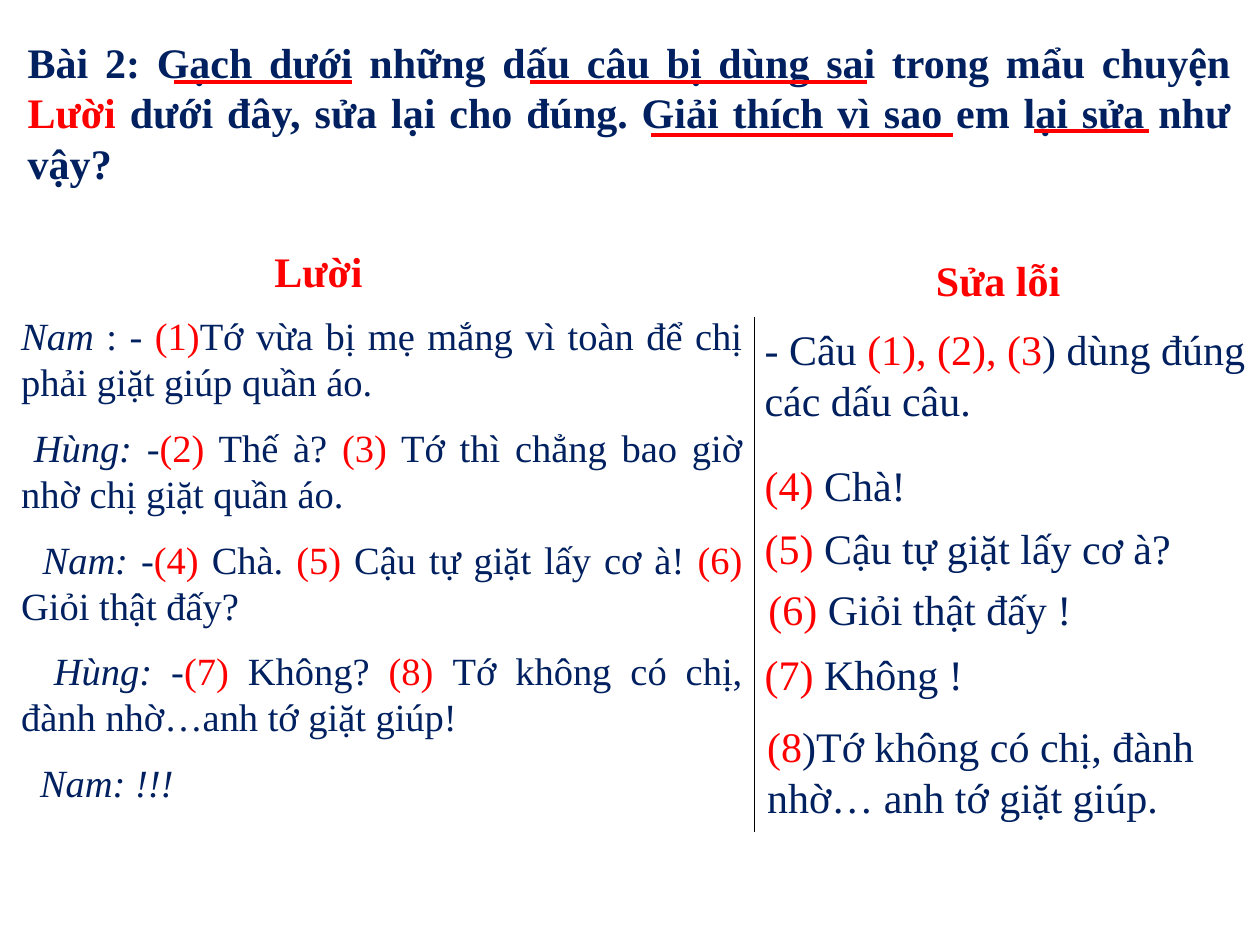
from lxml import etree
from pptx import Presentation
from pptx.dml.color import RGBColor
from pptx.enum.shapes import MSO_CONNECTOR
from pptx.enum.text import MSO_ANCHOR, PP_ALIGN
from pptx.oxml.ns import qn
from pptx.util import Inches, Pt

LEFT, JUSTIFY = PP_ALIGN.LEFT, PP_ALIGN.JUSTIFY
FONT = "Times New Roman"
COLORS = {"navy": "002060", "red": "FF0000", "black": "000000"}

# Run styles: n = navy, r = red, i = navy italic
TITLE = [("n", "Bài 2: Gạch dưới những dấu câu bị dùng sai trong mẩu chuyện "),
         ("r", "Lười"),
         ("n", " dưới đây, sửa lại cho đúng. Giải thích vì sao em lại sửa như vậy?")]

# First-line indent, runs
STORY = [
    (0, [("i", "Nam"), ("n", " : - "), ("r", "(1)"),
         ("n", "Tớ vừa bị mẹ mắng vì toàn để chị phải giặt giúp quần áo.")]),
    (0.1, [("i", "Hùng:"), ("n", " -"), ("r", "(2)"), ("n", " Thế à? "), ("r", "(3)"),
           ("n", " Tớ thì chẳng bao giờ nhờ chị giặt quần áo.")]),
    (0.17, [("i", "Nam:"), ("n", " -"), ("r", "(4) "), ("n", "Chà."), ("r", " (5) "),
            ("n", "Cậu tự giặt lấy cơ à!"), ("r", " (6) "), ("n", "Giỏi thật đấy?")]),
    (0.26, [("i", "Hùng:"), ("n", " -"), ("r", "(7) "), ("n", "Không? "), ("r", "(8) "),
            ("n", "Tớ không có chị, đành nhờ…anh tớ giặt giúp!")]),
    (0.15, [("i", "Nam: !!!")]),
]

# Left, top, width, height, text
HEADINGS = [(2.08, 1.9, 1.5, 0.5, "Lười"), (7.33, 1.97, 2.25, 0.5, "Sửa lỗi")]

# Left, top, width, height, runs
FIXES = [
    (5.97, 2.52, 4.08, 0.91, [("n", "- Câu "), ("r", "(1), (2), (3"),
                              ("n", ") dùng đúng các dấu câu.")]),
    (5.97, 3.6, 3.75, 0.5, [("r", "(4)"), ("n", " Chà!")]),
    (5.97, 4.1, 4.08, 0.5, [("r", "(5)"), ("n", " Cậu tự giặt lấy cơ à?")]),
    (6, 4.58, 3.83, 0.5, [("r", "(6) "), ("n", "Giỏi thật đấy !")]),
    (5.97, 5.1, 3.25, 0.5, [("r", "(7)"), ("n", " Không !")]),
    (5.99, 5.67, 4.08, 0.91, [("r", "(8"),
                              ("n", ")Tớ không có chị, đành nhờ… anh tớ giặt giúp.")]),
]

# Start x, end x, y
UNDERLINES = [(1.38, 2.79, 0.65), (4.21, 6.88, 0.65), (5.17, 7.56, 1.07), (8.21, 9.12, 1.04)]


def place(sp, left, top, width, height):
    sp.left, sp.top, sp.width, sp.height = map(Inches, (left, top, width, height))


def write(sp, paragraphs, size, bold=False, align=LEFT):
    tf = sp.text_frame
    tf.word_wrap = True
    tf.vertical_anchor = MSO_ANCHOR.TOP
    for n, (indent, runs) in enumerate(paragraphs):
        p = tf.add_paragraph() if n else tf.paragraphs[0]
        p.alignment = align
        p.space_before = Pt(size / 2)
        if indent:
            p._p.get_or_add_pPr().set("indent", str(Inches(indent)))
        for style, text in runs:
            r = p.add_run()
            r.text = text
            r.font.name = FONT
            r.font.size = Pt(size)
            r.font.bold = bold
            r.font.italic = style == "i"
            color = COLORS["red" if style == "r" else "navy"]
            r.font.color.rgb = RGBColor.from_string(color)


def add_text(s, box, paragraphs, size=24, bold=False, align=LEFT):
    sp = s.shapes.add_textbox(*map(Inches, box))
    write(sp, paragraphs, size, bold, align)


def add_line(s, x1, y1, x2, y2, color, width):
    line = s.shapes.add_connector(MSO_CONNECTOR.STRAIGHT, *map(Inches, (x1, y1, x2, y2)))
    line.line.color.rgb = RGBColor.from_string(COLORS[color])
    line.line.width = Pt(width)
    etree.SubElement(line._element.spPr, qn("a:effectLst"))


def main():
    prs = Presentation()
    prs.slide_width, prs.slide_height = Inches(10), Inches(7.5)
    s = prs.slides.add_slide(prs.slide_layouts[5])

    # Exercise statement
    title = s.shapes.title
    place(title, 0.12, 0.24, 9.75, 1.31)
    write(title, [(0, TITLE)], 24, True, JUSTIFY)

    # Story and corrections, parted by a vertical rule
    add_text(s, (0.07, 2.43, 5.92, 4.13), STORY, 22, align=JUSTIFY)
    for *box, text in HEADINGS:
        add_text(s, box, [(0, [("r", text)])], bold=True)
    add_line(s, 5.99, 2.52, 5.99, 6.6, "black", 0.75)
    for *box, runs in FIXES:
        add_text(s, box, [(0, runs)])

    # Key phrases underlined in the statement
    for x1, x2, y in UNDERLINES:
        add_line(s, x1, y, x2, y, "red", 2.25)

    prs.save("out.pptx")


if __name__ == "__main__":
    main()
